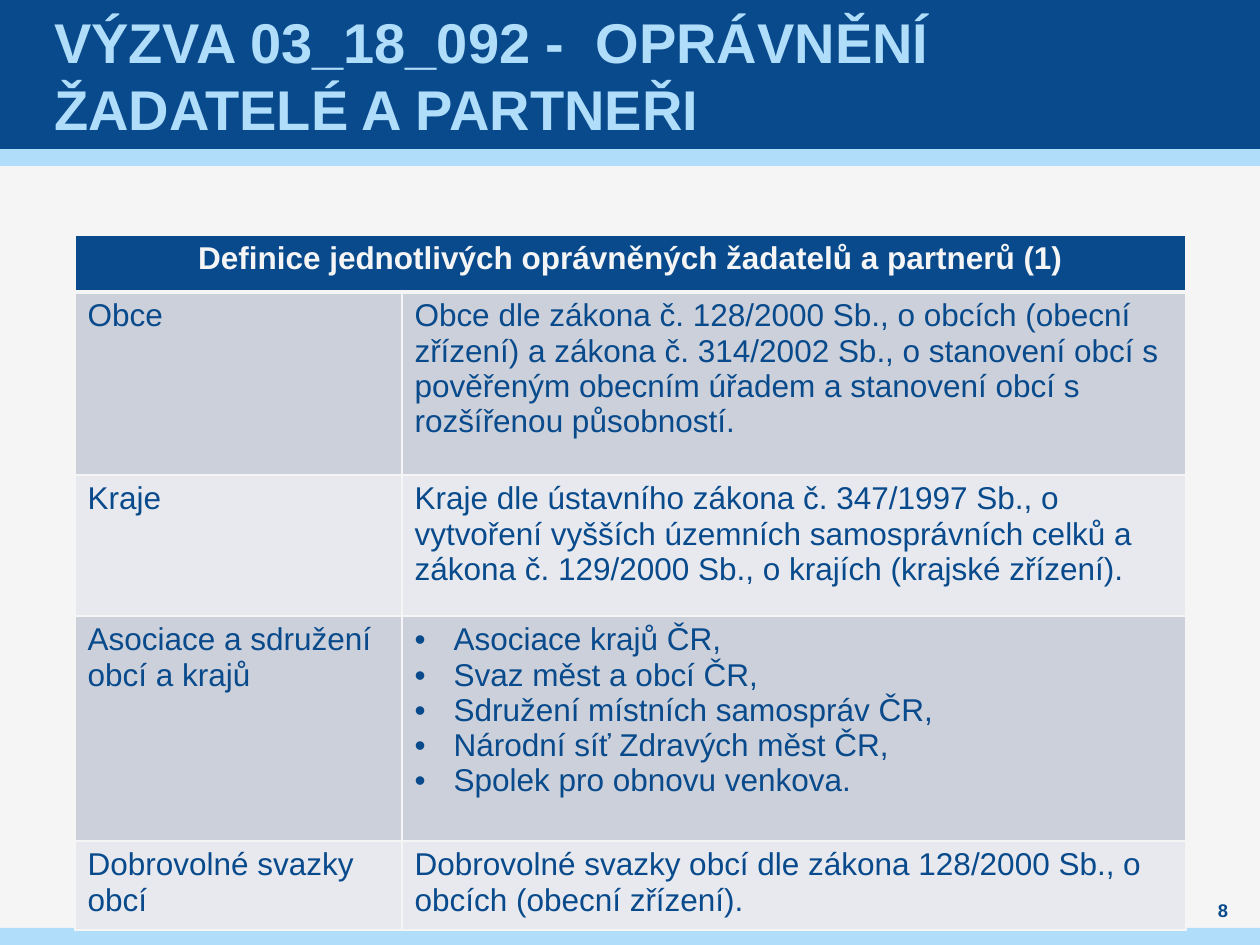
from lxml import etree
from pptx import Presentation, util as u
from pptx.dml.color import RGBColor
from pptx.enum import shapes, text
from pptx.oxml import ns

NAVY, SKY, PAPER = "084A8B", "AFDDFA", "F5F5F5"
BANDS = ["CCD0DA", "E7E9EE"]


def px(*lengths):
    return [u.Emu(round(n * 914400 / 126)) for n in lengths]


def add_run(paragraph, words, size, color, bold=False):
    run = paragraph.add_run()
    run.text = words
    run.font.name = "Arial"
    run.font.size = u.Pt(size)
    run.font.bold = bold
    run.font.color.rgb = RGBColor.from_string(color)


deck = Presentation()
deck.slide_width, deck.slide_height = px(1260, 945)
slide = deck.slides.add_slide(deck.slide_layouts[5])
slide.background.fill.solid()
slide.background.fill.fore_color.rgb = RGBColor.from_string(PAPER)

for top, height, color in [(149, 17, SKY), (0, 149, NAVY), (928, 17, SKY)]:
    band = slide.shapes.add_shape(shapes.MSO_SHAPE.RECTANGLE, *px(0, top, 1260, height))
    band.shadow.inherit = False
    band.fill.solid()
    band.fill.fore_color.rgb = RGBColor.from_string(color)
    band.line.fill.background()

heading = slide.shapes.title
slide.shapes.element.append(heading.element)
heading.left, heading.top, heading.width, heading.height = px(49, 0, 1160, 149)
frame = heading.text_frame
frame.margin_left, frame.margin_top, frame.margin_right, frame.margin_bottom = px(5, 0, 5, 0)
frame.vertical_anchor = text.MSO_ANCHOR.MIDDLE
frame.auto_size = text.MSO_AUTO_SIZE.NONE
frame.word_wrap = True
frame.paragraphs[0].alignment = text.PP_ALIGN.LEFT
add_run(frame.paragraphs[0], "VÝZVA 03_18_092 -  OPRÁVNĚNÍ ŽADATELÉ A PARTNEŘI", 32, SKY, True)

rows = [
    (57, ["Definice jednotlivých oprávněných žadatelů a partnerů (1)"], []),
    (183, ["Obce"], [
        "Obce dle zákona č. 128/2000 Sb., o obcích (obecní zřízení) a zákona č. 314/2002 Sb., "
        "o stanovení obcí s pověřeným obecním úřadem a stanovení obcí s rozšířenou působností."]),
    (141, ["Kraje"], [
        "Kraje dle ústavního zákona č. 347/1997 Sb., o vytvoření vyšších územních samosprávních "
        "celků a zákona č. 129/2000 Sb., o krajích (krajské zřízení)."]),
    (225, ["Asociace a sdružení obcí a krajů"], [
        "Asociace krajů ČR,",
        "Svaz měst a obcí ČR,",
        "Sdružení místních samospráv ČR,",
        "Národní síť Zdravých měst ČR,",
        "Spolek pro obnovu venkova."]),
    (89, ["Dobrovolné svazky obcí"], [
        "Dobrovolné svazky obcí dle zákona 128/2000 Sb., o obcích (obecní zřízení)."]),
]
definitions = slide.shapes.add_table(len(rows), 2, *px(75, 235, 1111, 695)).table
definitions.columns[0].width, definitions.columns[1].width = px(327, 784)
definitions.cell(0, 0).merge(definitions.cell(0, 1))

for r, (height, *entries) in enumerate(rows):
    definitions.rows[r].height = px(height)[0]
    for c, lines in enumerate(entries):
        cell = definitions.cell(r, c)
        for side in "LRTB":
            thick = (r, side) in [(0, "B"), (1, "T")]
            border = etree.SubElement(cell._tc.get_or_add_tcPr(), ns.qn(f"a:ln{side}"),
                                      w=str(u.Pt(3 if thick else 1)))
            paint = etree.SubElement(border, ns.qn("a:solidFill"))
            etree.SubElement(paint, ns.qn("a:srgbClr"), val=PAPER)
        cell.fill.solid()
        cell.fill.fore_color.rgb = RGBColor.from_string(BANDS[(r - 1) % 2] if r else NAVY)
        for i, line in enumerate(lines):
            paragraph = cell.text_frame.paragraphs[0] if i == 0 else cell.text_frame.add_paragraph()
            if r == 0:
                paragraph.alignment = text.PP_ALIGN.CENTER
            if len(lines) > 1:
                props = paragraph._p.get_or_add_pPr()
                indent = px(39)[0]
                props.set("marL", str(indent))
                props.set("indent", str(-indent))
                etree.SubElement(props, ns.qn("a:buFont"), typeface="Arial")
                etree.SubElement(props, ns.qn("a:buChar"), char="•")
            add_run(paragraph, line, 18, NAVY if r else PAPER, r == 0)

page_number = slide.shapes.add_textbox(*px(1191, 898, 64, 25)).text_frame
page_number.margin_left = page_number.margin_right = 0
page_number.margin_top = page_number.margin_bottom = 0
page_number.word_wrap = True
page_number.vertical_anchor = text.MSO_ANCHOR.MIDDLE
page_number.paragraphs[0].alignment = text.PP_ALIGN.CENTER
add_run(page_number.paragraphs[0], "8", 10.5, NAVY, True)

deck.save("out.pptx")
